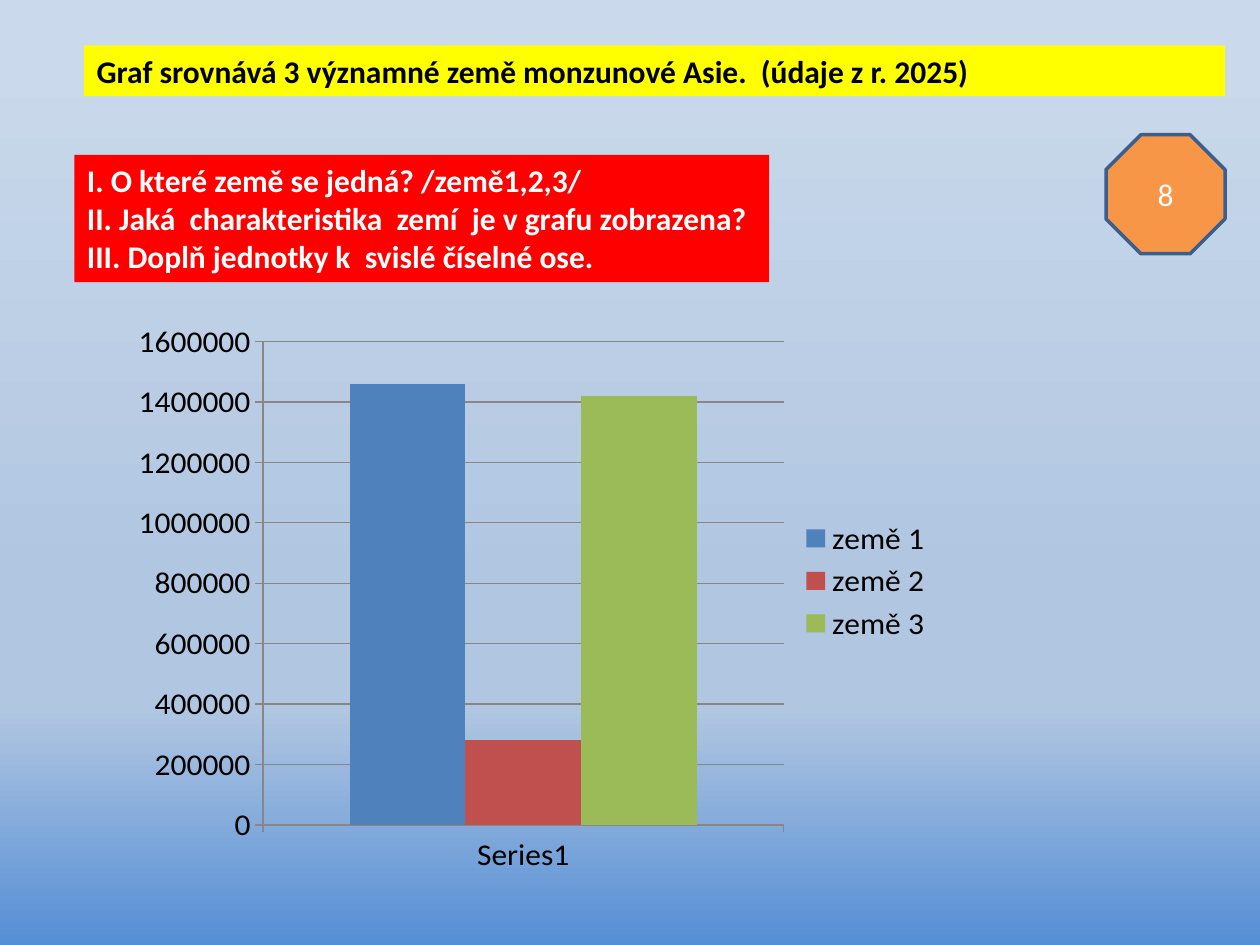
from copy import deepcopy
from dataclasses import dataclass

from lxml import etree
from pptx import Presentation
from pptx.chart.data import CategoryChartData
from pptx.dml.color import RGBColor
from pptx.enum.chart import XL_CHART_TYPE, XL_LEGEND_POSITION, XL_TICK_MARK
from pptx.enum.shapes import MSO_SHAPE
from pptx.enum.text import MSO_ANCHOR, MSO_AUTO_SIZE, PP_ALIGN
from pptx.oxml.ns import qn
from pptx.util import Pt

COLUMN = XL_CHART_TYPE.COLUMN_CLUSTERED
RIGHT = XL_LEGEND_POSITION.RIGHT
OUT = XL_TICK_MARK.OUTSIDE
OCTAGON = MSO_SHAPE.OCTAGON
TOP, MIDDLE = MSO_ANCHOR.TOP, MSO_ANCHOR.MIDDLE
LEFT, CENTER = PP_ALIGN.LEFT, PP_ALIGN.CENTER
FIXED = MSO_AUTO_SIZE.NONE


@dataclass(frozen=True)
class Theme:
    font: str = "Calibri"
    size: int = 18
    black: str = "000000"
    white: str = "FFFFFF"
    yellow: str = "FFFF00"
    red: str = "FF0000"
    orange: str = "F79646"
    edge: str = "3A5F8C"
    grid: str = "878787"
    sky: tuple = ((6, "CAD9EB"), (62, "B0C6E1"), (75, "B0C6E1"), (100, "558ED5"))


THEME = Theme()

TITLE = "Graf srovnává 3 významné země monzunové Asie.  (údaje z r. 2025)"
TASKS = (
    "I. O které země se jedná? /země1,2,3/",
    "II. Jaká  charakteristika  zemí  je v grafu zobrazena?",
    "III. Doplň jednotky k  svislé číselné ose.",
)
LANDS = (
    ("země 1", 1460000, "4F81BD"),
    ("země 2", 280000, "C0504D"),
    ("země 3", 1420000, "9BBB59"),
)
PLOT = {"x": 0.188, "y": 0.053, "w": 0.62, "h": 0.903}


def paint(fill, color):
    fill.solid()
    fill.fore_color.rgb = RGBColor.from_string(color)


def style(font, color, bold=False):
    font.name = THEME.font
    font.size = Pt(THEME.size)
    font.bold = bold
    font.color.rgb = RGBColor.from_string(color)


def place(shape, box):
    shape.left, shape.top, shape.width, shape.height = map(Pt, box)


def write(shape, text, color, align, anchor, bold=False):
    frame = shape.text_frame
    frame.text = text
    frame.word_wrap = True
    frame.auto_size = FIXED
    frame.vertical_anchor = anchor
    for para in frame.paragraphs:
        para.alignment = align
        para.space_before = Pt(0)
        for run in para.runs:
            style(run.font, color, bold)


def plain(frame):
    """Take bullets and indents off a list."""
    for para in frame.paragraphs:
        props = para._p.get_or_add_pPr()
        props.set("marL", "0")
        props.set("indent", "0")
        etree.SubElement(props, qn("a:buNone"))


def shade(slide):
    """Vertical gradient background."""
    fill = slide.background.fill
    fill.gradient()
    fill.gradient_angle = 270
    stops = slide.element.find(".//" + qn("a:gsLst"))
    for _ in range(len(THEME.sky) - len(stops)):
        stops.append(deepcopy(stops[0]))
    for stop, (spot, color) in zip(fill.gradient_stops, THEME.sky):
        stop.position = spot / 100
        stop.color.rgb = RGBColor.from_string(color)


def badge(slide, text, box):
    shape = slide.shapes.add_shape(OCTAGON, *map(Pt, box))
    shape.shadow.inherit = False
    paint(shape.fill, THEME.orange)
    paint(shape.line.fill, THEME.edge)
    shape.line.width = Pt(2)
    write(shape, text, THEME.white, CENTER, MIDDLE)


def fix_plot(chart):
    """Pin the inner plot area to fractions of the chart."""
    area = chart._chartSpace.find(".//" + qn("c:plotArea"))
    layout = area.find(qn("c:layout"))
    if layout is None:
        layout = etree.Element(qn("c:layout"))
        area.insert(0, layout)
    manual = etree.SubElement(layout, qn("c:manualLayout"))
    parts = {"layoutTarget": "inner", "xMode": "edge", "yMode": "edge", **PLOT}
    for name, val in parts.items():
        etree.SubElement(manual, qn("c:" + name)).set("val", str(val))


def graph(slide, box):
    data = CategoryChartData()
    data.categories = ["Series1"]
    for name, val, _ in LANDS:
        data.add_series(name, [val])
    chart = slide.shapes.add_chart(COLUMN, *map(Pt, box), data).chart
    style(chart.font, THEME.black)
    chart.has_title = False
    chart.has_legend = True
    chart.legend.position = RIGHT
    chart.legend.include_in_layout = False

    # Columns
    plot = chart.plots[0]
    plot.gap_width = 150
    plot.overlap = 0
    plot.vary_by_categories = False
    for series, (_, _, color) in zip(plot.series, LANDS):
        paint(series.format.fill, color)

    # Axes and grid
    rise = chart.value_axis
    rise.minimum_scale, rise.maximum_scale = 0, 1600000
    rise.major_unit = 200000
    rise.has_major_gridlines = True
    paint(rise.major_gridlines.format.line.fill, THEME.grid)
    for axis in (rise, chart.category_axis):
        axis.major_tick_mark = OUT
        paint(axis.format.line.fill, THEME.grid)
    fix_plot(chart)


def main():
    deck = Presentation()
    deck.slide_width, deck.slide_height = Pt(720), Pt(540)
    slide = deck.slides.add_slide(deck.slide_layouts[1])
    shade(slide)

    # Chart
    graph(slide, (60, 179, 480, 320))

    # Heading
    head = slide.shapes.title
    place(head, (48, 26, 652, 29))
    paint(head.fill, THEME.yellow)
    write(head, TITLE, THEME.black, LEFT, TOP, bold=True)

    # Questions
    tasks = slide.placeholders[1]
    place(tasks, (42.5, 88.5, 397, 72.7))
    paint(tasks.fill, THEME.red)
    write(tasks, "\n".join(TASKS), THEME.white, LEFT, TOP, bold=True)
    plain(tasks.text_frame)

    # Number
    badge(slide, "8", (632, 77, 68, 68))

    deck.save("out.pptx")


if __name__ == "__main__":
    main()
